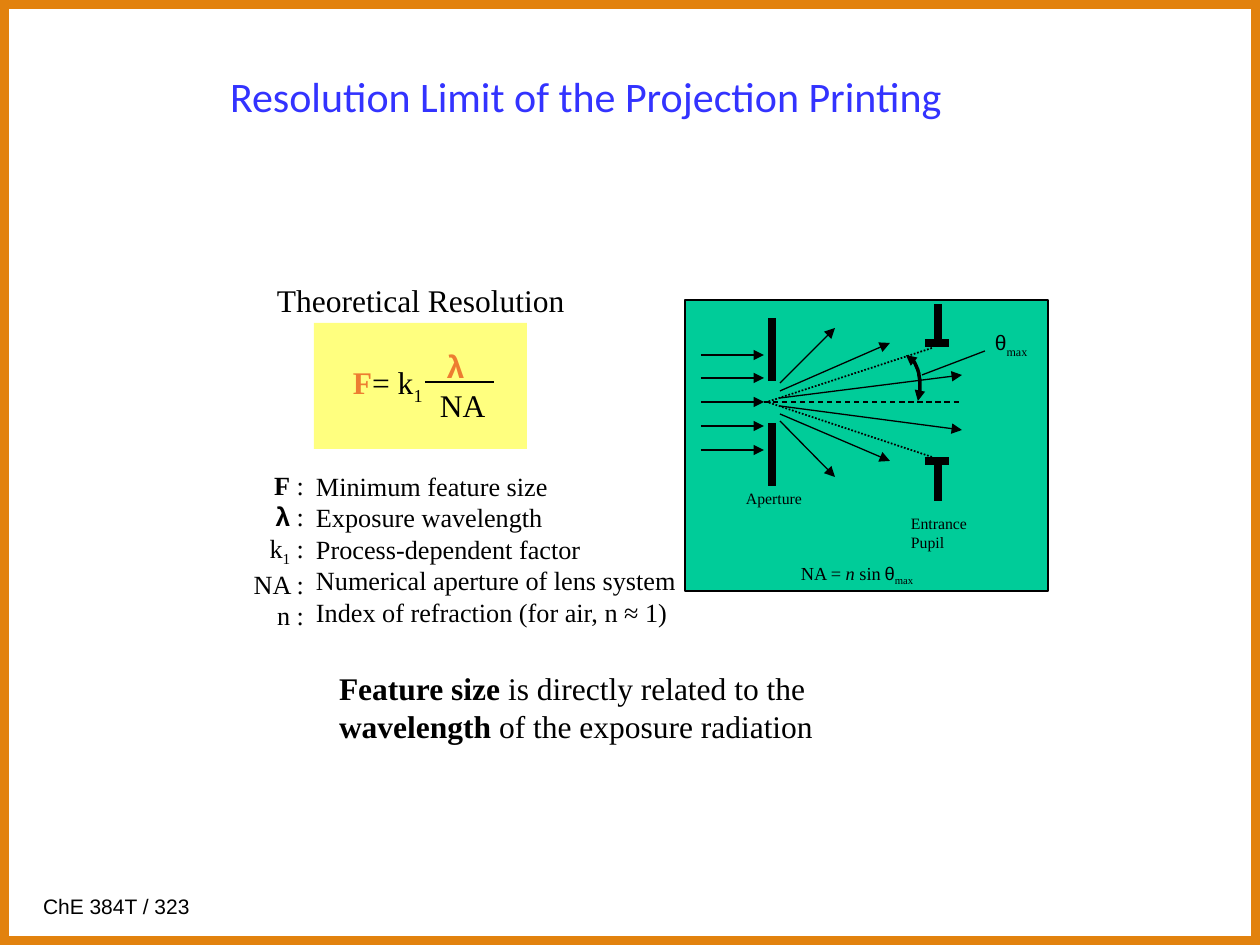
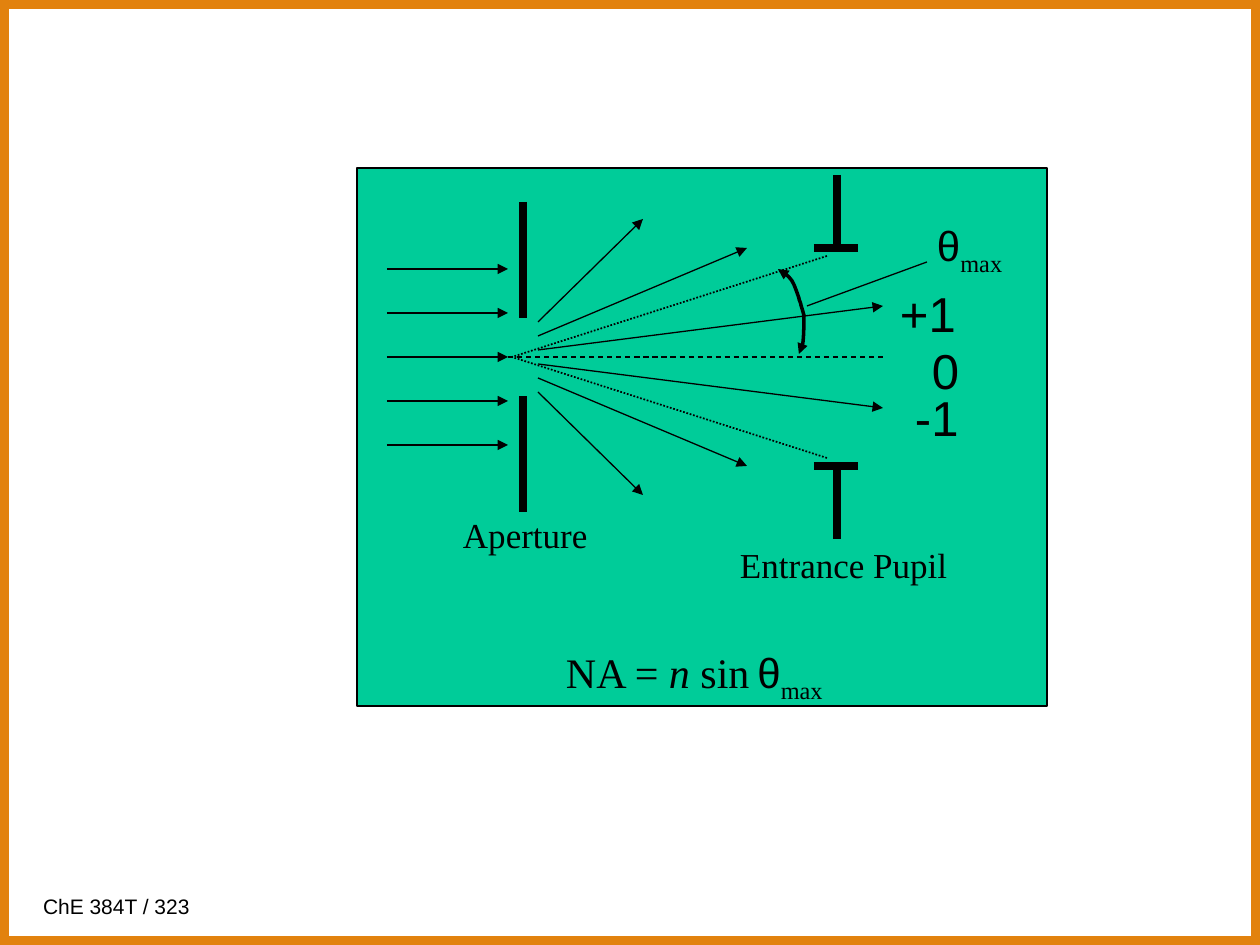
import pptx
import pptx.dml.color
import pptx.enum.dml
import pptx.enum.shapes
import pptx.enum.text
import pptx.oxml.ns
import pptx.util
from lxml import etree

RGBColor = pptx.dml.color.RGBColor
ORANGE_FRAME = RGBColor(0xE2, 0x82, 0x0E)
ORANGE_TERM = RGBColor(0xED, 0x7D, 0x31)
TITLE_BLUE = RGBColor(0x33, 0x33, 0xFF)
GREEN = RGBColor(0x00, 0xCC, 0x99)
YELLOW = RGBColor(0xFF, 0xFF, 0x00)
BLACK = RGBColor(0, 0, 0)

PX = 914400 // 126
SERIF, SANS, TITLE_FONT = "Times New Roman", "Arial", "Calibri"
ALIGN = pptx.enum.text.PP_ALIGN
DASH = pptx.enum.dml.MSO_LINE
RECTANGLE = pptx.enum.shapes.MSO_SHAPE.RECTANGLE
STRAIGHT = pptx.enum.shapes.MSO_CONNECTOR.STRAIGHT

BOLD = {"bold": True}
SUB = {"name": SERIF, "baseline": -25000}
SYMBOL = {"name": SANS}
THETA_MAX = [("θ", SYMBOL), ("max", SUB)]

# Diagram geometry, measured from the panel's left edge and the optical axis
PANEL_WIDTH, PANEL_HEIGHT, AXIS = 690, 538, 189
RAYS = [(35, 286, 138), (21, 390, 109), (7, 526, 51)]
ARC = [(421, 101), (436, 110), (436, 113), (442, 130), (442, 132), (444, 135),
       (444, 137), (445, 140), (447, 147), (447, 147), (447, 156), (447, 166),
       (446, 175), (445, 179), (442, 186), (442, 186)]


def emu(*lengths):
    return [length * PX for length in lengths]


def add_child(parent, tag, **attributes):
    child = etree.SubElement(parent, pptx.oxml.ns.qn(tag))
    for key, value in attributes.items():
        child.set(key, value)


def bezier_points(controls, steps=6):
    """Points along a chain of cubic curves that share their end points."""
    points = [controls[0]]
    for i in range(0, len(controls) - 1, 3):
        for step in range(1, steps + 1):
            t = step / steps
            weights = ((1 - t) ** 3, 3 * t * (1 - t) ** 2, 3 * t * t * (1 - t), t ** 3)
            points.append(tuple(
                sum(w * p[axis] for w, p in zip(weights, controls[i:i + 4]))
                for axis in (0, 1)))
    return points


class Painter:
    def __init__(self):
        self.deck = pptx.Presentation()
        self.deck.slide_width, self.deck.slide_height = emu(1260, 945)
        self.page = self.shapes = None

    def new_page(self, layout):
        self.page = self.deck.slides.add_slide(self.deck.slide_layouts.get_by_name(layout))
        self.shapes = self.page.shapes

    def group(self):
        """Send the following elements into a new group."""
        self.shapes = self.page.shapes.add_group_shape().shapes

    def ungroup(self):
        self.shapes = self.page.shapes

    def move_to_master(self, *shapes):
        for shape in shapes:
            self.deck.slide_master.shapes.element.append(shape.element)

    def fill_text(self, box, paragraphs, size, name=SERIF, color=BLACK, align=ALIGN.LEFT,
                  inset=(13, 6), wrap=False, anchor=pptx.enum.text.MSO_ANCHOR.TOP):
        """Each paragraph is a string or a list of (text, format) spans."""
        frame = box.text_frame
        sides = dict(zip(("left", "top", "right", "bottom"), emu(*inset, *inset)))
        for side, margin in sides.items():
            setattr(frame, "margin_" + side, margin)
        frame.word_wrap = wrap
        frame.vertical_anchor = anchor
        frame.auto_size = pptx.enum.text.MSO_AUTO_SIZE.NONE
        for i, spans in enumerate(paragraphs):
            para = frame.add_paragraph() if i else frame.paragraphs[0]
            para.alignment = align
            for text, extra in [(spans, {})] if isinstance(spans, str) else spans:
                span = para.add_run()
                span.text = text
                style = {"size": size, "name": name, "color": color, **extra}
                style["size"] = pptx.util.Pt(style["size"])
                span.font.color.rgb = style.pop("color")
                if "baseline" in style:
                    span._r.get_or_add_rPr().set("baseline", str(style.pop("baseline")))
                for key, value in style.items():
                    setattr(span.font, key, value)

    def text(self, area, paragraphs, size, **style):
        box = self.shapes.add_textbox(*emu(*area))
        self.fill_text(box, paragraphs, size, **style)
        return box

    def title(self, area, text):
        box = self.page.shapes.title
        box.left, box.top, box.width, box.height = emu(*area)
        self.fill_text(box, [text], 24, name=TITLE_FONT, color=TITLE_BLUE, inset=(10, 5),
                       wrap=True, anchor=pptx.enum.text.MSO_ANCHOR.MIDDLE)

    def rectangle(self, area, fill=None, line=None, width=0.75, alpha=None):
        shape = self.shapes.add_shape(RECTANGLE, *emu(*area))
        shape.shadow.inherit = False
        if fill is None:
            shape.fill.background()
        else:
            shape.fill.solid()
            shape.fill.fore_color.rgb = fill
            if alpha:
                color = shape.element.spPr.find(".//" + pptx.oxml.ns.qn("a:srgbClr"))
                add_child(color, "a:alpha", val=str(alpha * 1000))
        if line is None:
            shape.line.fill.background()
        else:
            self.stroke(shape, width, color=line)
        return shape

    def stroke(self, shape, width, color=BLACK, dash=None, ends=()):
        shape.line.color.rgb = color
        shape.line.width = pptx.util.Pt(width)
        if dash:
            shape.line.dash_style = dash
        outline = shape.element.spPr.find(pptx.oxml.ns.qn("a:ln"))
        for end in ends:
            add_child(outline, f"a:{end}End", type="triangle")

    def line(self, start, end, width=0.75, **style):
        connector = self.shapes.add_connector(STRAIGHT, *emu(*start, *end))
        self.stroke(connector, width, **style)
        add_child(connector.element.spPr, "a:effectLst")

    def curve(self, controls):
        points = [(round(x * PX), round(y * PX)) for x, y in bezier_points(controls)]
        builder = self.shapes.build_freeform(*points[0])
        builder.add_line_segments(points[1:], close=False)
        shape = builder.convert_to_shape()
        shape.fill.background()
        shape.shadow.inherit = False
        self.stroke(shape, 2, ends=("head", "tail"))

    def diffraction_diagram(self, panel, labels):
        """Aperture and pupil scaled to the panel; labels are (area, paragraphs, size)."""
        left, top, width, height = panel

        def place(x, y):
            return (round(left + x * width / PANEL_WIDTH),
                    round(top + (AXIS + y) * height / PANEL_HEIGHT))

        def draw(x1, y1, x2, y2, weight=0.75, **style):
            self.line(place(x1, y1), place(x2, y2), weight, **style)

        self.group()
        self.rectangle(panel, fill=GREEN, line=BLACK)
        for side in (-1, 1):
            draw(166, side * 155, 166, side * 39, 4.5)
            for start, end_x, end in RAYS:
                draw(181, side * start, end_x, side * end, ends=["tail"])
            draw(480, side * 182, 480, side * 109, 4.5)
            draw(457, side * 109, 501, side * 109, 4.5)
            draw(470, side * 101, 155, 0, 1, dash=DASH.ROUND_DOT)
        for row in range(-2, 3):
            draw(30, row * 44, 151, row * 44, ends=["tail"])
        draw(151, 0, 526, 0, dash=DASH.DASH)
        self.curve([place(x, y - AXIS) for x, y in ARC])
        draw(450, -51, 570, -95)
        for area, paragraphs, size in labels:
            self.text(area, paragraphs, size)
        self.ungroup()


def aperture_formula(space_size):
    return [("NA = ", {}), ("n", {"italic": True}), (" sin", {}),
            (" ", {"size": space_size}), *THETA_MAX]


def add_master_parts(painter):
    frame = painter.rectangle((0, 0, 1260, 945), line=ORANGE_FRAME, width=10)
    footer = painter.text((30, 888, 360, 38), ["ChE 384T / 323"], 12, name=SANS, wrap=True)
    painter.move_to_master(frame, footer)


def resolution_slide(painter):
    painter.new_page("Title Only")
    add_master_parts(painter)
    painter.title((220, 66, 904, 60), "Resolution Limit of the Projection Printing")
    painter.text((329, 664, 498, 86),
                 [[("Feature size", BOLD), (" is directly related to the", {})],
                  [("wavelength", BOLD), (" of the exposure radiation", {})]],
                 18, inset=(10, 5))
    tight = {"inset": (9, 5)}
    painter.text((268, 276, 310, 48), ["Theoretical Resolution"], 18, **tight)

    term = {"bold": True, "color": ORANGE_TERM}
    painter.group()
    painter.rectangle((314, 323, 213, 126), fill=YELLOW, alpha=50)
    painter.text((344, 358, 91, 48), [[("F", term), ("= k", {}), ("1", SUB)]], 18, **tight)
    painter.line((425, 382), (494, 382), 1)
    painter.text((438, 342, 37, 48), [[("λ", {**term, **SYMBOL})]], 18, **tight)
    painter.text((431, 381, 64, 48), ["NA"], 18, **tight)

    painter.group()
    painter.text((244, 464, 69, 169),
                 [[("F", BOLD), (" :", {})],
                  [("λ", {**BOLD, **SYMBOL}), (" :", {})],
                  [("k", {}), ("1", SUB), (" :", {})],
                  "NA :", "n :"], 15, align=ALIGN.RIGHT, **tight)
    painter.text((303, 464, 388, 171),
                 ["Minimum feature size", "Exposure wavelength", "Process-dependent factor",
                  "Numerical aperture of lens system", "Index of refraction (for air, n ≈ 1)"], 15)

    painter.diffraction_diagram((685, 300, 363, 291), [
        ((733, 483, 82, 32), ["Aperture"], 9),
        ((898, 508, 82, 50), ["Entrance", "Pupil"], 9),
        ((982, 324, 60, 38), [THETA_MAX], 12),
        ((788, 556, 142, 35), [aperture_formula(9)], 10.5)])


def diffraction_orders_slide(painter):
    painter.new_page("Blank")
    painter.diffraction_diagram((357, 168, 690, 538), [
        ((450, 508, 151, 55), ["Aperture"], 20),
        ((727, 537, 232, 55), ["Entrance Pupil"], 20),
        ((924, 214, 96, 64), [THETA_MAX], 24),
        ((553, 641, 290, 64), [aperture_formula(18)], 24)])
    for order, area in (("0", (919, 334, 53, 72)), ("+1", (887, 277, 82, 72)),
                        ("-1", (902, 382, 69, 72))):
        painter.text(area, [order], 28, name=SANS)


def main():
    painter = Painter()
    resolution_slide(painter)
    diffraction_orders_slide(painter)
    painter.deck.save("out.pptx")


if __name__ == "__main__":
    main()
